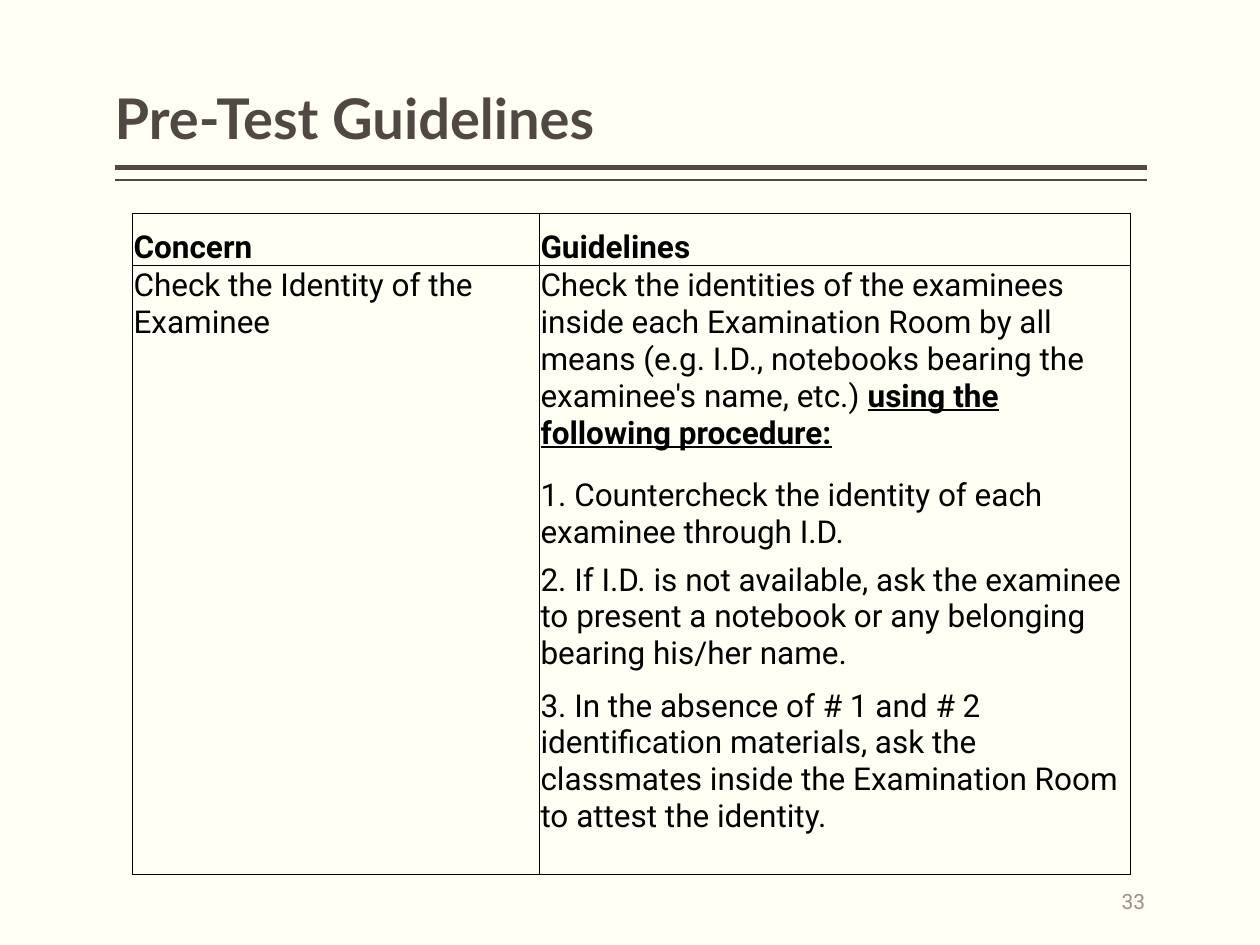
import pptx
import pptx.dml.color
import pptx.enum.shapes
import pptx.enum.text
import pptx.oxml
import pptx.oxml.ns
import pptx.util

COLORS = {"paper": "FFFFF3", "brown": "514843", "muted": "9D8F88", "ink": "000000"}
ANCHOR = pptx.enum.text.MSO_ANCHOR
ALIGN = pptx.enum.text.PP_ALIGN

HEADER = ["Concern", "Guidelines"]
CONCERN = "Check the Identity of the Examinee"
INTRO = (
    "Check the identities of the examinees inside each Examination Room by all means "
    "(e.g. I.D., notebooks bearing the examinee's name, etc.) "
)
EMPHASIS = "using the following procedure:"
STEPS = [
    "1. Countercheck the identity of each examinee through I.D.",
    "2. If I.D. is not available, ask the examinee to present a notebook "
    "or any belonging bearing his/her name.",
    "3. In the absence of # 1 and # 2 identification materials, ask the classmates "
    "inside the Examination Room to attest the identity.",
]


class SlideBuilder:
    COLUMNS, ROWS = 100, 75
    TITLE_FONT, BODY_FONT = "Lato", "Roboto"

    def __init__(self, deck):
        self.deck = deck
        self.page = deck.slides.add_slide(deck.slide_layouts[6])
        fill = self.page.background.fill
        fill.solid()
        fill.fore_color.rgb = self.color("paper")

    def color(self, name):
        return pptx.dml.color.RGBColor.from_string(COLORS[name])

    def x(self, columns):
        return round(self.deck.slide_width * columns / self.COLUMNS)

    def y(self, rows):
        return round(self.deck.slide_height * rows / self.ROWS)

    def style(self, para, font, size, color, bold=False):
        para.font.name = font
        para.font.size = pptx.util.Pt(size)
        para.font.bold = bold
        para.font.color.rgb = self.color(color)

    def rule(self, left, right, row, width):
        line = self.page.shapes.add_connector(
            pptx.enum.shapes.MSO_CONNECTOR.STRAIGHT,
            self.x(right), self.y(row), self.x(left), self.y(row),
        )
        line.line.color.rgb = self.color("brown")
        line.line.width = pptx.util.Pt(width)
        line._element.spPr.append(pptx.oxml.parse_xml(
            f'<a:effectLst {pptx.oxml.ns.nsdecls("a")}/>'))

    def text(self, words, left, top, width, height, font, size, color,
             anchor, align=ALIGN.LEFT, bold=False, spacing=1.0):
        box = self.page.shapes.add_textbox(
            self.x(left), self.y(top), self.x(width), self.y(height))
        frame = box.text_frame
        frame.word_wrap = True
        frame.vertical_anchor = anchor
        frame.margin_left = frame.margin_right = 0
        para = frame.paragraphs[0]
        para.text = words
        para.alignment = align
        para.line_spacing = spacing
        self.style(para, font, size, color, bold)

    def table(self, left, top, widths, heights):
        shape = self.page.shapes.add_table(
            len(heights), len(widths), self.x(left), self.y(top),
            self.x(sum(widths)), self.y(sum(heights)))
        table = shape.table
        table.first_row = table.horz_banding = False
        for column, width in zip(table.columns, widths):
            column.width = self.x(width)
        for row, height in zip(table.rows, heights):
            row.height = self.y(height)
        last = len(heights) - 1
        for number, row in enumerate(table.rows):
            for cell in row.cells:
                cell.fill.background()
                self.borders(cell, top=number <= 1, bottom=number in (0, last))
        return table

    def borders(self, cell, top, bottom):
        properties = cell._tc.get_or_add_tcPr()
        sides = {"L": True, "R": True, "T": top, "B": bottom}
        for place, (side, visible) in enumerate(sides.items()):
            paint = (f'<a:solidFill><a:srgbClr val="{COLORS["ink"]}"/></a:solidFill>'
                     if visible else "<a:noFill/>")
            width = pptx.util.Pt(0.5)
            properties.insert(place, pptx.oxml.parse_xml(
                f'<a:ln{side} {pptx.oxml.ns.nsdecls("a")} w="{width}">{paint}</a:ln{side}>'))

    def cell(self, cell, words, bold=False, anchor=ANCHOR.TOP, emphasis=""):
        cell.margin_left = cell.margin_right = cell.margin_top = self.x(0.1)
        cell.margin_bottom = 0
        cell.vertical_anchor = anchor
        para = cell.text_frame.paragraphs[0]
        para.text = words
        self.style(para, self.BODY_FONT, 18, "ink", bold)
        if emphasis:
            span = para.add_run()
            span.text = emphasis
            span.font.bold = span.font.underline = True


def main():
    deck = pptx.Presentation()
    deck.slide_width = pptx.util.Inches(10)
    deck.slide_height = pptx.util.Inches(7.5)
    builder = SlideBuilder(deck)

    for row, width in ((13.3, 3), (14.3, 1)):
        builder.rule(9.1, 91, row, width)
    builder.text("Pre-Test Guidelines", 9.1, 3, 85, 9.5, builder.TITLE_FONT, 32,
                 "brown", ANCHOR.BOTTOM, bold=True, spacing=0.9)
    builder.text("33", 75.9, 69.5, 15, 4, builder.BODY_FONT, 12,
                 "muted", ANCHOR.MIDDLE, align=ALIGN.RIGHT)

    table = builder.table(10.5, 16.9, [32.3, 46.9], [4.2, 16.7, 6.7, 10, 14.9])
    for column, heading in enumerate(HEADER):
        builder.cell(table.cell(0, column), heading, bold=True, anchor=ANCHOR.BOTTOM)
    builder.cell(table.cell(1, 0), CONCERN)
    builder.cell(table.cell(1, 1), INTRO, emphasis=EMPHASIS)
    for row, step in enumerate(STEPS, start=2):
        builder.cell(table.cell(row, 1), step)

    deck.save("out.pptx")


if __name__ == "__main__":
    main()
